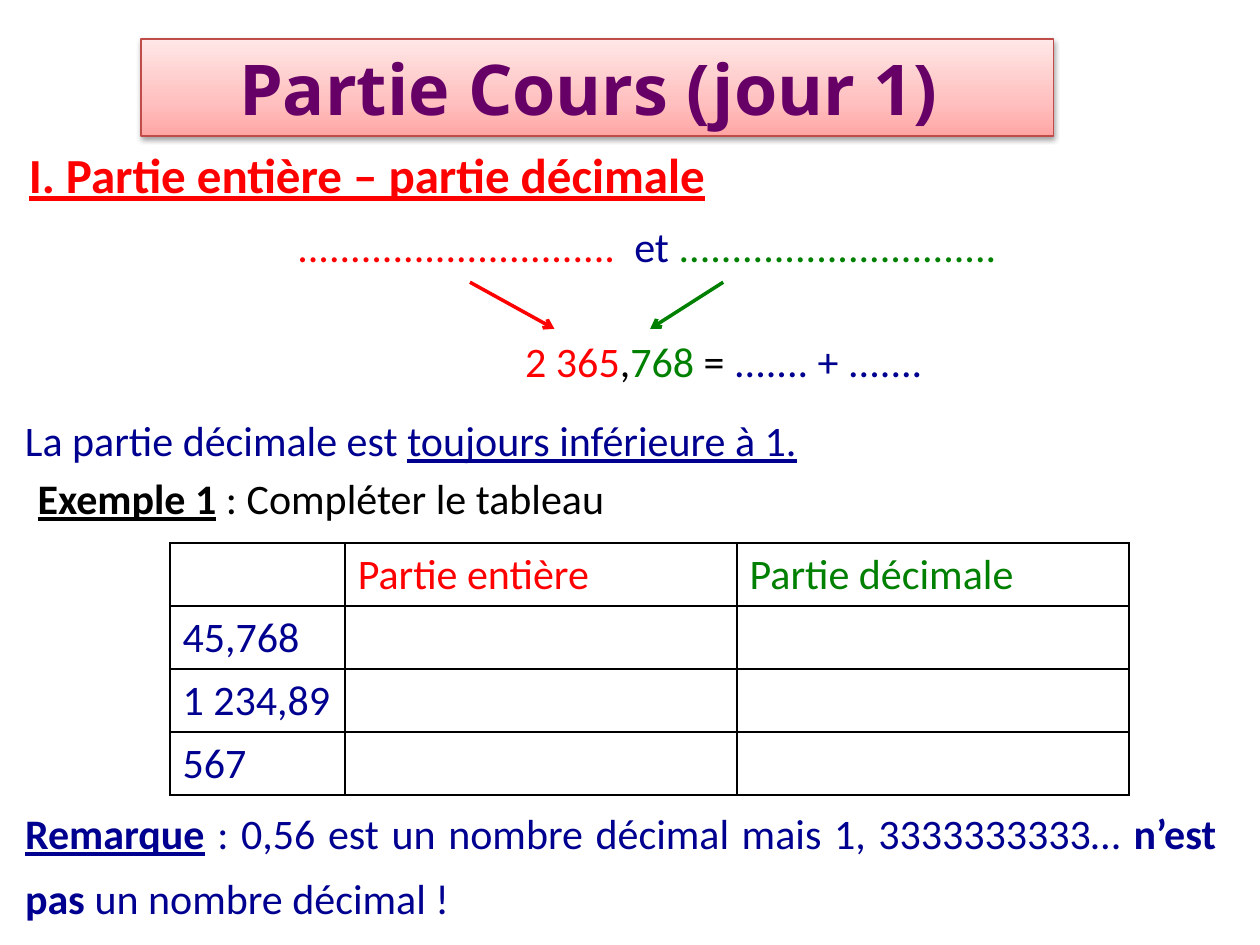
from copy import deepcopy
from dataclasses import dataclass

from lxml import etree
from pptx import Presentation
from pptx.dml.color import RGBColor as RGB
from pptx.enum.dml import MSO_LINE
from pptx.enum.shapes import MSO_CONNECTOR as LINK, MSO_SHAPE as SHAPE
from pptx.enum.text import MSO_ANCHOR as ANCHOR, MSO_AUTO_SIZE as AUTO, PP_ALIGN as ALIGN
from pptx.oxml import parse_xml
from pptx.oxml.ns import nsdecls, qn
from pptx.util import Inches, Pt


@dataclass(frozen=True)
class Theme:
    red: str = "FF0000"
    green: str = "008000"
    navy: str = "000090"
    black: str = "000000"
    plum: str = "660066"
    edge: str = "BF4C48"
    blend: tuple = ((0, "FFA6A5"), (0.35, "FFC0BF"), (1, "FFE7E7"))
    font: str = "Calibri"
    head_font: str = "Noto Sans"
    body: int = 24
    head: int = 28
    title: int = 40


T = Theme()


def add_run(para, text, color, size=T.body, font=T.font, bold=False, under=False):
    run = para.add_run()
    run.text = text
    style = run.font
    style.name, style.size = font, Pt(size)
    style.bold, style.underline = bold, under
    style.color.rgb = RGB.from_string(color)


def add_text(slide, box, runs, align=ALIGN.LEFT, space=None, wrap=True):
    """Each run is (text, color, optional style dict)."""
    frame = slide.shapes.add_textbox(*map(Inches, box)).text_frame
    frame.word_wrap = wrap
    frame.auto_size = AUTO.SHAPE_TO_FIT_TEXT
    para = frame.paragraphs[0]
    para.alignment = align
    if space:
        para.line_spacing = space
    for text, color, *style in runs:
        add_run(para, text, color, **(style[0] if style else {}))


def add_arrow(slide, start, end, color):
    line = slide.shapes.add_connector(LINK.STRAIGHT, *map(Inches, start + end))
    line.line.color.rgb = RGB.from_string(color)
    line.line.width = Pt(2)
    etree.SubElement(line.line._get_or_add_ln(), qn("a:tailEnd"), type="arrow")
    etree.SubElement(line._element.spPr, qn("a:effectLst"))


def add_title(slide, box, text):
    shape = slide.shapes.add_shape(SHAPE.RECTANGLE, *map(Inches, box))
    # Three-stop blend, dark at the bottom
    fill = shape.fill
    fill.gradient()
    fill.gradient_angle = 90
    props = shape._element.spPr
    stops = props.find(".//" + qn("a:gsLst"))
    stops.append(deepcopy(stops[-1]))
    for stop, (place, color) in zip(fill.gradient_stops, T.blend):
        stop.position = place
        stop.color.rgb = RGB.from_string(color)
    shape.line.color.rgb = RGB.from_string(T.edge)
    shape.line.width = Pt(0.75)
    shape.line.dash_style = MSO_LINE.SOLID
    # Soft shadow below
    shape.shadow.inherit = False
    props.find(qn("a:effectLst")).append(parse_xml(
        f'<a:outerShdw {nsdecls("a")} blurRad="{Pt(3.1)}" dist="{Pt(1.6)}" '
        f'dir="5400000" rotWithShape="0"><a:srgbClr val="{T.black}">'
        '<a:alpha val="38000"/></a:srgbClr></a:outerShdw>'))
    frame = shape.text_frame
    frame.word_wrap = True
    frame.vertical_anchor = ANCHOR.MIDDLE
    para = frame.paragraphs[0]
    para.alignment = ALIGN.CENTER
    add_run(para, text, T.plum, T.title, T.head_font, bold=True)


def set_edges(cell):
    props = cell._tc.get_or_add_tcPr()
    for side in ("lnL", "lnR", "lnT", "lnB"):
        props.append(parse_xml(
            f'<a:{side} {nsdecls("a")} w="{Pt(1)}"><a:solidFill>'
            f'<a:srgbClr val="{T.black}"/></a:solidFill></a:{side}>'))
    cell.fill.background()


def add_grid(slide, left, top, widths, height, rows):
    """Each cell is (text, color)."""
    grid = slide.shapes.add_table(
        len(rows), len(widths), Inches(left), Inches(top),
        Inches(sum(widths)), Inches(height * len(rows))).table
    for col, width in zip(grid.columns, widths):
        col.width = Inches(width)
    for r, row in enumerate(rows):
        grid.rows[r].height = Inches(height)
        for c, (text, color) in enumerate(row):
            cell = grid.cell(r, c)
            set_edges(cell)
            para = cell.text_frame.paragraphs[0]
            para.font.size = Pt(T.body)
            if text:
                add_run(para, text, color)


def main():
    deck = Presentation()
    deck.slide_width, deck.slide_height = Inches(10), Inches(7.5)
    slide = deck.slides.add_slide(deck.slide_layouts[6])
    strong = dict(bold=True, under=True)

    # Headings
    add_title(slide, (1.12, 0.31, 7.24, 0.77), "Partie Cours (jour 1) ")
    add_text(slide, (0.13, 1.1, 6.39, 0.57), [
        ("I. Partie entière – partie décimale", T.red, dict(strong, size=T.head))])

    # Split of a number into its two parts
    dots = "." * 30
    add_text(slide, (0.52, 1.7, 9.23, 0.5), [
        (dots + "  ", T.red), ("et ", T.navy), (dots, T.green)], ALIGN.CENTER)
    add_arrow(slide, (3.73, 2.24), (4.4, 2.61), T.red)
    add_arrow(slide, (5.74, 2.24), (5.16, 2.61), T.green)
    add_text(slide, (4.07, 2.61, 4.11, 0.5), [
        ("2 365", T.red), (",", T.black), ("768 ", T.green),
        ("= ", T.black), ("....... + .......", T.navy)])
    add_text(slide, (0.1, 3.12, 9.84, 0.63), [
        ("La partie décimale est ", T.navy),
        ("toujours inférieure à 1.", T.navy, dict(under=True))], ALIGN.JUSTIFY, 1.3)

    # Example with its table
    add_text(slide, (0.2, 3.7, 4.73, 0.5), [
        ("Exemple 1", T.black, strong), (" ", T.black, dict(bold=True)),
        (": Compléter le tableau", T.black)], wrap=False)
    blank = ("", T.navy)
    rows = [[blank, ("Partie entière", T.red), ("Partie décimale", T.green)]]
    rows += [[(num, T.navy), blank, blank] for num in ("45,768", "1 234,89", "567")]
    add_grid(slide, 1.35, 4.31, (1.39, 3.11, 3.11), 0.5, rows)

    # Closing remark
    add_text(slide, (0.1, 6.24, 9.65, 1.13), [
        ("Remarque", T.navy, strong),
        (" : 0,56 est un nombre décimal mais 1, 3333333333… ", T.navy),
        ("n’est pas", T.navy, dict(bold=True)),
        (" un nombre décimal !", T.navy)], ALIGN.JUSTIFY, 1.3)

    deck.save("out.pptx")


if __name__ == "__main__":
    main()
